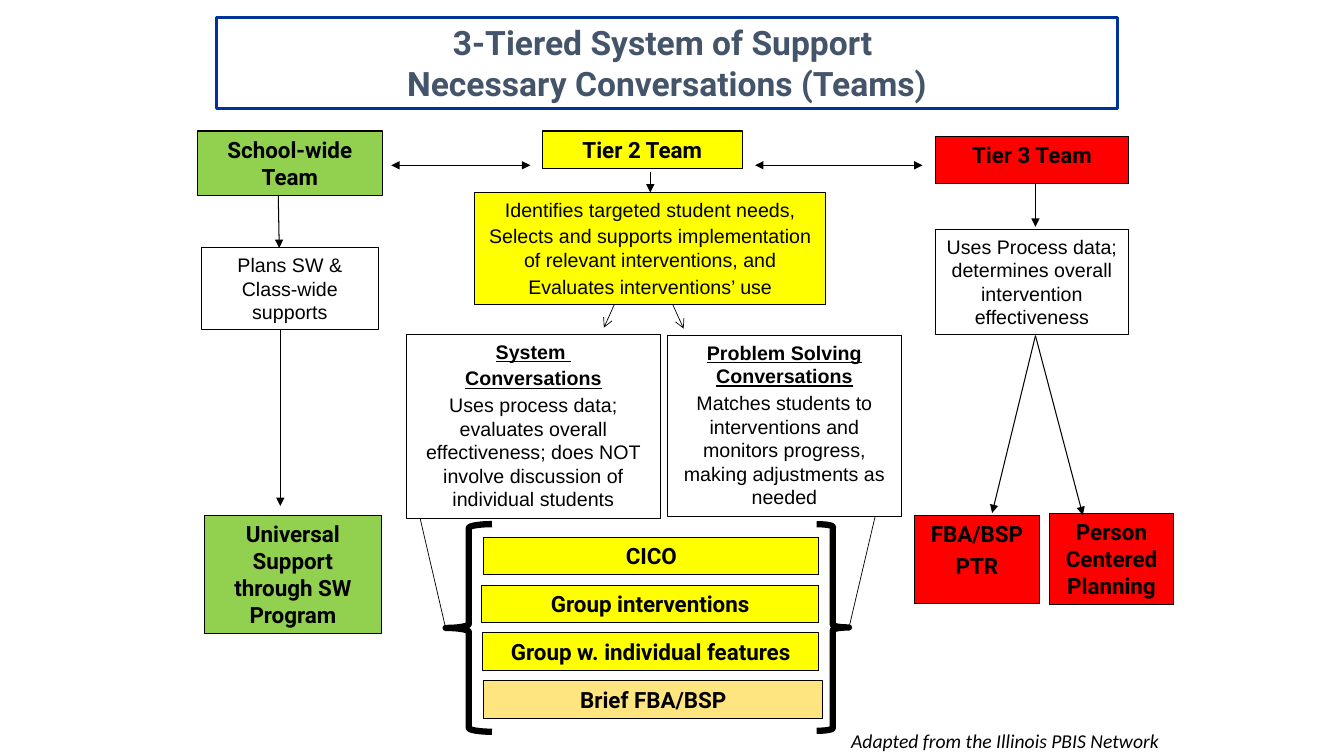
from lxml.etree import SubElement
from pptx import Presentation
from pptx.dml.color import RGBColor
from pptx.enum.shapes import MSO_CONNECTOR, MSO_SHAPE
from pptx.enum.text import MSO_ANCHOR, MSO_AUTO_SIZE, PP_ALIGN
from pptx.oxml.ns import qn
from pptx.util import Inches, Pt

BLACK, WHITE = "000000", "FFFFFF"
GREEN, YELLOW, RED, AMBER = "92D050", "FFFF00", "FF0000", "FFCC00"
NAVY, SLATE = "003399", "44546A"


def rgb(hex_color):
    return RGBColor.from_string(hex_color)


def set_outline(item, color=BLACK, width=0.75):
    item.line.color.rgb = rgb(color)
    item.line.width = Pt(width)


def set_fill(shape, color, alpha=None):
    shape.fill.solid()
    shape.fill.fore_color.rgb = rgb(color)
    if alpha is not None:
        color_node = shape.fill._xPr.find(qn("a:solidFill"))[0]
        SubElement(color_node, qn("a:alpha")).set("val", str(alpha * 1000))


def write_lines(shape, lines, font, size, color=BLACK, bold=False, headings=0,
                gap=0, align=PP_ALIGN.CENTER, italic=False):
    """Write one paragraph per line; the first `headings` are bold and underlined."""
    frame = shape.text_frame
    frame.word_wrap = True
    frame.auto_size = MSO_AUTO_SIZE.NONE
    frame.vertical_anchor = MSO_ANCHOR.TOP
    frame.margin_left = frame.margin_right = Inches(0.1)
    frame.margin_top = frame.margin_bottom = Inches(0.05)
    for index, line in enumerate(lines):
        paragraph = frame.paragraphs[0] if index == 0 else frame.add_paragraph()
        paragraph.text = line
        paragraph.alignment = align
        paragraph.line_spacing = 1.0
        paragraph.space_before = Pt(gap if index else 0)
        paragraph.font.name = font
        paragraph.font.size = Pt(size)
        paragraph.font.bold = bold or index < headings
        paragraph.font.underline = index < headings
        paragraph.font.italic = italic
        paragraph.font.color.rgb = rgb(color)


def add_box(slide, place, color, alpha=None):
    box = slide.shapes.add_shape(MSO_SHAPE.RECTANGLE, *map(Inches, place))
    box.shadow.inherit = False
    set_fill(box, color, alpha)
    set_outline(box)
    return box


def add_label(slide, place, color, *lines, alpha=None):
    label = add_box(slide, place, color, alpha)
    write_lines(label, lines, "Roboto", 16, bold=True, gap=4)
    return label


def add_detail(slide, place, color, *lines, headings=0):
    detail = add_box(slide, place, color)
    write_lines(detail, lines, "Arial", 14, headings=headings, gap=2.3)
    return detail


def add_line(slide, start, end, width=0.75, head=None, tail=None):
    line = slide.shapes.add_connector(
        MSO_CONNECTOR.STRAIGHT, *map(Inches, (*start, *end)))
    set_outline(line, width=width)
    properties = line._element.spPr
    outline = properties.find(qn("a:ln"))
    for tag, kind in (("a:headEnd", head), ("a:tailEnd", tail)):
        if kind:
            SubElement(outline, qn(tag)).set("type", kind)
    SubElement(properties, qn("a:effectLst"))
    return line


def add_brace(slide, kind, place):
    brace = slide.shapes.add_shape(kind, *map(Inches, place))
    brace.shadow.inherit = False
    brace.fill.background()
    set_outline(brace, width=4.5)


def add_title(slide):
    title = slide.shapes.title
    title.left, title.top, title.width, title.height = map(
        Inches, (2.15, 0.17, 8.93, 0.91))
    set_fill(title, WHITE)
    set_outline(title, NAVY, 2.25)
    write_lines(title, ["3-Tiered System of Support ",
                        "Necessary Conversations (Teams)"],
                "Roboto", 24, SLATE, bold=True)


def add_school_wide(slide):
    add_line(slide, (2.76, 1.94), (2.77, 2.46), tail="triangle")
    add_line(slide, (2.78, 3.06), (2.78, 5.02), tail="triangle")
    add_label(slide, (1.96, 1.3, 1.83, 0.64), GREEN, "School-wide\vTeam")
    add_detail(slide, (2, 2.46, 1.75, 0.81), WHITE,
               "Plans SW & Class-wide supports")
    add_label(slide, (2.03, 5.11, 1.75, 1.18), GREEN,
              "Universal Support through SW Program")


def add_tier_2(slide):
    # Interventions between braces
    add_brace(slide, MSO_SHAPE.LEFT_BRACE, (4.42, 5.2, 0.46, 2.06))
    add_brace(slide, MSO_SHAPE.RIGHT_BRACE, (8.1, 5.2, 0.32, 2.05))
    add_line(slide, (4.12, 4.94), (4.42, 6.23), width=0.5)
    add_line(slide, (8.73, 4.91), (8.42, 6.23), width=0.5)
    interventions = [
        ("CICO", 4.8, 3.32, YELLOW, None),
        ("Group interventions", 4.78, 3.34, YELLOW, None),
        ("Group w. individual features", 4.79, 3.33, YELLOW, None),
        ("Brief FBA/BSP", 4.8, 3.36, AMBER, 50),
    ]
    for row, (name, left, width, color, alpha) in enumerate(interventions):
        add_label(slide, (left, 5.33 + 0.475 * row, width, 0.37), color, name,
                  alpha=alpha)

    # Two kinds of conversation
    add_line(slide, (6.49, 2.14), (5.99, 3.25), width=0.5, tail="arrow")
    add_line(slide, (6.55, 2.75), (6.78, 3.26), width=0.5, tail="arrow")
    add_detail(slide, (6.62, 3.33, 2.32, 1.79), WHITE,
               "Problem Solving Conversations",
               "Matches students to interventions and monitors progress, "
               "making adjustments as needed", headings=1)
    add_detail(slide, (4.03, 3.32, 2.52, 1.82), WHITE,
               "System ", "Conversations",
               "Uses process data; evaluates overall effectiveness; does NOT "
               "involve discussion of individual students", headings=2)

    # Team and its tasks
    tasks = add_detail(
        slide, (4.71, 1.91, 3.48, 1.11), YELLOW,
        "Identifies targeted student needs,",
        "Selects and supports implementation of relevant interventions, and",
        "Evaluates interventions’ use")
    team_to_tasks = add_line(slide, (6.45, 1.71), (6.45, 1.91), tail="triangle")
    team_to_tasks.end_connect(tasks, 0)
    add_label(slide, (5.38, 1.3, 1.98, 0.37), YELLOW, "Tier 2 Team")


def add_tier_3(slide):
    add_detail(slide, (9.28, 2.28, 1.91, 1.04), WHITE,
               "Uses Process data; determines overall intervention effectiveness")
    add_line(slide, (10.27, 1.72), (10.27, 2.25), tail="triangle")
    add_label(slide, (9.07, 5.11, 1.24, 0.88), RED, "FBA/BSP", "PTR")
    add_label(slide, (10.41, 5.09, 1.23, 0.91), RED, "Person Centered Planning")
    for plan_top in ((9.84, 5.09), (10.74, 5.11)):
        add_line(slide, (10.27, 3.33), plan_top, tail="triangle")
    add_label(slide, (9.28, 1.35, 1.91, 0.47), RED, "Tier 3 Team")


def add_credit(slide):
    credit = slide.shapes.add_textbox(*map(Inches, (7.47, 7.18, 4.17, 0.34)))
    write_lines(credit, ["Adapted from the Illinois PBIS Network "],
                "Calibri", 14, align=PP_ALIGN.RIGHT, italic=True)


def main():
    presentation = Presentation()
    presentation.slide_width = Inches(13.33)
    presentation.slide_height = Inches(7.5)
    slide = presentation.slides.add_slide(presentation.slide_layouts[5])

    add_title(slide)
    add_school_wide(slide)
    add_tier_2(slide)
    add_tier_3(slide)

    # Exchange between neighbouring teams
    for left, right in ((3.88, 5.26), (7.49, 9.15)):
        add_line(slide, (left, 1.64), (right, 1.64),
                 head="triangle", tail="triangle")
    add_credit(slide)
    presentation.save("out.pptx")


if __name__ == "__main__":
    main()
